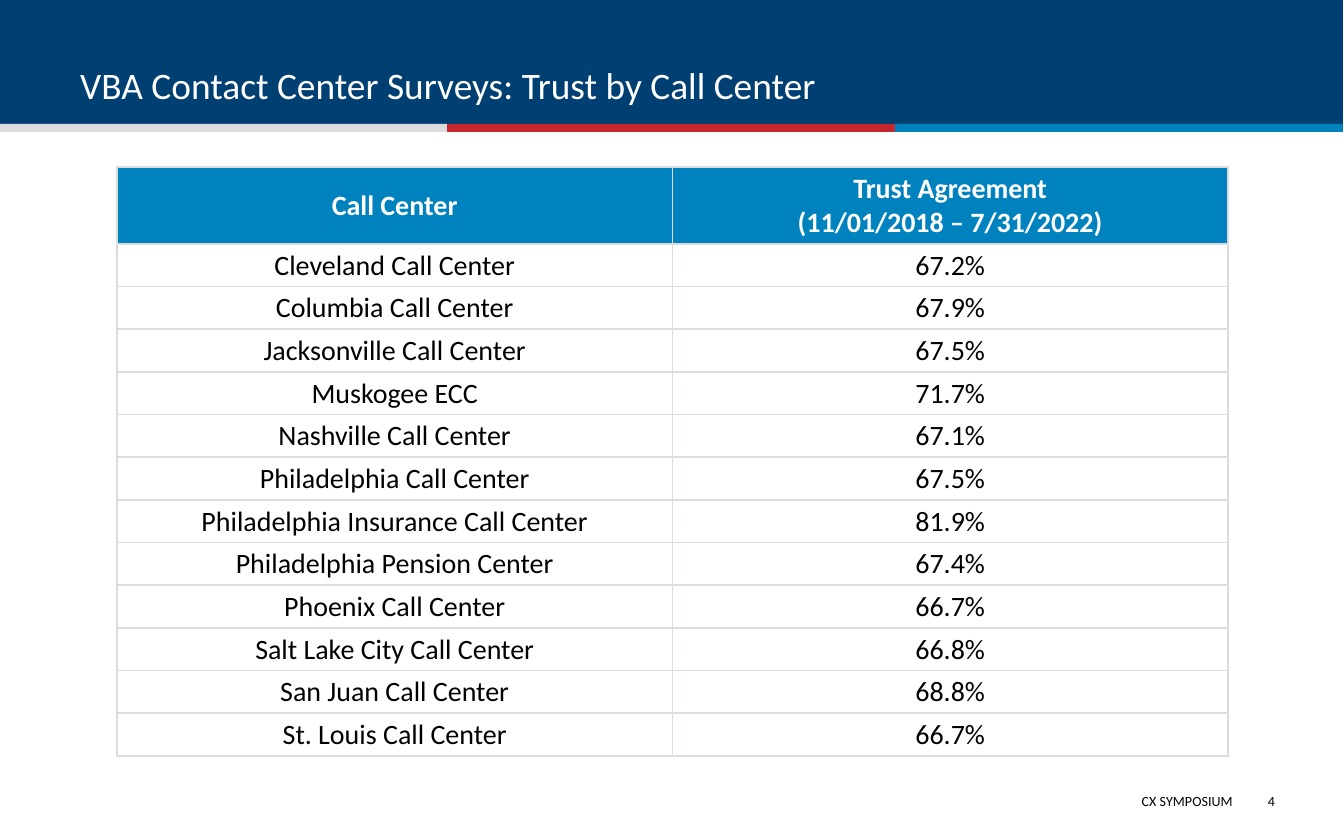
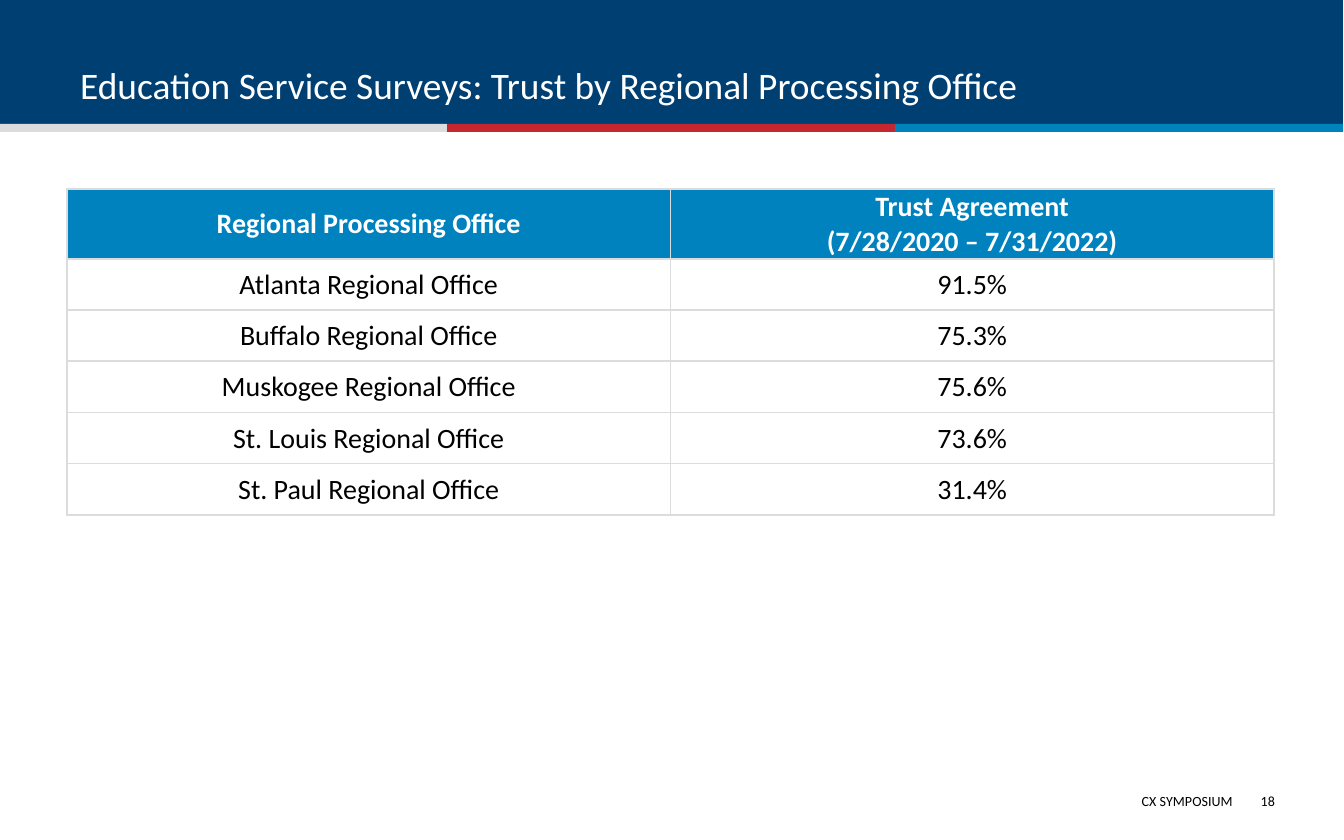
"""Builds two slides of trust survey results, each with one table."""
from lxml.etree import SubElement
from pptx import Presentation
from pptx.dml.color import RGBColor
from pptx.enum.shapes import MSO_SHAPE
from pptx.enum.text import MSO_ANCHOR, PP_ALIGN
from pptx.oxml.ns import qn
from pptx.util import Pt

SCALE = 914400 / 134.4
WIDE, HIGH = 1344, 840
FONT = "Calibri"
NAVY, GREY, RED, BLUE = "003F72", "DBDCDE", "C6262D", "0082BD"
HEAD, WHITE, BLACK = "0082BE", "FFFFFF", "000000"

CENTERS = [
    ("Cleveland Call Center", "67.2%"),
    ("Columbia Call Center", "67.9%"),
    ("Jacksonville Call Center", "67.5%"),
    ("Muskogee ECC", "71.7%"),
    ("Nashville Call Center", "67.1%"),
    ("Philadelphia Call Center", "67.5%"),
    ("Philadelphia Insurance Call Center", "81.9%"),
    ("Philadelphia Pension Center", "67.4%"),
    ("Phoenix Call Center", "66.7%"),
    ("Salt Lake City Call Center", "66.8%"),
    ("San Juan Call Center", "68.8%"),
    ("St. Louis Call Center", "66.7%"),
]
OFFICES = [
    ("Atlanta Regional Office", "91.5%"),
    ("Buffalo Regional Office", "75.3%"),
    ("Muskogee Regional Office", "75.6%"),
    ("St. Louis Regional Office", "73.6%"),
    ("St. Paul Regional Office", "31.4%"),
]


def px(size):
    return round(size * SCALE)


def color(code):
    return RGBColor.from_string(code)


def write(frame, lines, size, ink, align, anchor, bold=False):
    frame.word_wrap = True
    frame.vertical_anchor = anchor
    for i, line in enumerate(lines):
        para = frame.add_paragraph() if i else frame.paragraphs[0]
        para.alignment = align
        run = para.add_run()
        run.text = line
        run.font.name = FONT
        run.font.size = Pt(size)
        run.font.bold = bold
        run.font.color.rgb = color(ink)


def add_bar(slide, left, top, width, height, paint):
    bar = slide.shapes.add_shape(
        MSO_SHAPE.RECTANGLE, px(left), px(top), px(width), px(height))
    bar.shadow.inherit = False
    bar.fill.solid()
    bar.fill.fore_color.rgb = color(paint)
    bar.line.fill.background()


def add_text(slide, left, top, width, height, text, size, ink,
             align=PP_ALIGN.LEFT, anchor=MSO_ANCHOR.TOP, inset=True):
    box = slide.shapes.add_textbox(px(left), px(top), px(width), px(height))
    frame = box.text_frame
    if not inset:
        frame.margin_left = frame.margin_right = 0
        frame.margin_top = frame.margin_bottom = 0
    write(frame, [text], size, ink, align, anchor)


def add_edges(cell):
    props = cell._tc.get_or_add_tcPr()
    for side in ("lnL", "lnR", "lnT", "lnB"):
        edge = SubElement(props, qn(f"a:{side}"), w=str(Pt(1)))
        fill = SubElement(edge, qn("a:solidFill"))
        SubElement(fill, qn("a:srgbClr"), val=GREY)


def fill_cell(cell, lines, head):
    cell.margin_left = cell.margin_right = cell.margin_top = px(1)
    cell.margin_bottom = 0
    add_edges(cell)
    if head:
        cell.fill.solid()
        cell.fill.fore_color.rgb = color(HEAD)
    else:
        cell.fill.background()
    cell.vertical_anchor = MSO_ANCHOR.MIDDLE
    write_cell = cell.text_frame
    write(write_cell, lines, 15, WHITE if head else BLACK,
          PP_ALIGN.CENTER, MSO_ANCHOR.MIDDLE, head)


def add_grid(slide, left, top, width, first, body, label, dates, data):
    """Adds a table with a header of height first and data rows sharing body."""
    rows = [([label], ["Trust Agreement", dates])]
    rows += [([name], [score]) for name, score in data]
    grid = slide.shapes.add_table(
        len(rows), 2, px(left), px(top), px(width), px(first + body)).table
    grid.horz_banding = False
    for col in grid.columns:
        col.width = px(width / 2)
    for r, row in enumerate(rows):
        grid.rows[r].height = px(body / len(data) if r else first)
        for c, lines in enumerate(row):
            fill_cell(grid.cell(r, c), lines, r == 0)


def add_page(deck, title, number):
    slide = deck.slides.add_slide(deck.slide_layouts[6])
    add_bar(slide, -1, 0, WIDE, 128, NAVY)
    third = WIDE // 3
    for i, paint in enumerate((GREY, RED, BLUE)):
        add_bar(slide, i * third - 1, 124, third, 8, paint)
    add_text(slide, 556, 786, 690, 31, "CX SYMPOSIUM", 7.5, BLACK,
             PP_ALIGN.RIGHT)
    add_text(slide, 67, 15, 1210, 99, title, 20, WHITE,
             anchor=MSO_ANCHOR.BOTTOM)
    add_text(slide, 1239, 779, 36, 44, number, 7.5, BLACK,
             PP_ALIGN.RIGHT, MSO_ANCHOR.MIDDLE, inset=False)
    return slide


def main():
    deck = Presentation()
    deck.slide_width, deck.slide_height = px(WIDE), px(HIGH)
    page = add_page(deck, "VBA Contact Center Surveys: Trust by Call Center", "4")
    add_grid(page, 117, 167, 1111, 77, 512, "Call Center",
             "(11/01/2018 – 7/31/2022)", CENTERS)
    page = add_page(
        deck, "Education Service Surveys: Trust by Regional Processing Office", "18")
    add_grid(page, 67, 189, 1207, 70, 256, "Regional Processing Office",
             "(7/28/2020 – 7/31/2022)", OFFICES)
    deck.save("out.pptx")


if __name__ == "__main__":
    main()
